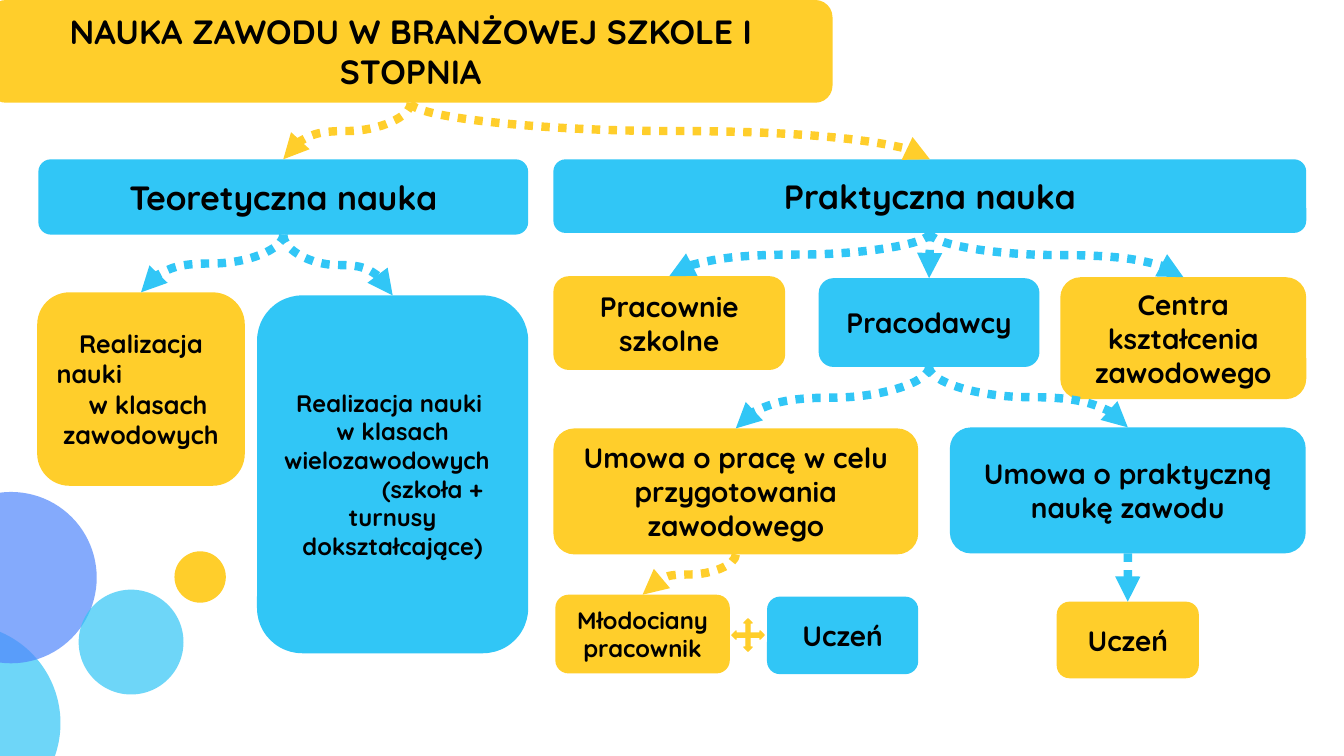
from dataclasses import dataclass

from lxml.etree import SubElement
from pptx import Presentation
from pptx.dml.color import RGBColor
from pptx.enum.dml import MSO_LINE
from pptx.enum.shapes import MSO_CONNECTOR, MSO_SHAPE
from pptx.enum.text import MSO_ANCHOR, PP_ALIGN
from pptx.oxml.ns import qn
from pptx.shapes.autoshape import Shape
from pptx.shapes.shapetree import GroupShapes, SlideShapes
from pptx.util import Pt

COLORS = {
    "yellow": "FFCE2B",
    "cyan": "31C6F6",
    "violet": "5186FB",
    "ink": "000000",
}
FRAME_FORMAT = {"word_wrap": True, "vertical_anchor": MSO_ANCHOR.MIDDLE}
FONT_FORMAT = {"name": "Quicksand", "bold": True}
LINK_FORMAT = {"width": Pt(6), "dash_style": MSO_LINE.ROUND_DOT}
TOP_SITE, BOTTOM_SITE = 0, 2


@dataclass(frozen=True)
class Line:
    text: str
    left_margin: float = 0
    right_margin: float = 0
    alignment: PP_ALIGN = PP_ALIGN.CENTER


@dataclass(frozen=True)
class Box:
    key: str
    left: float
    top: float
    width: float
    height: float
    color: str
    size: float
    lines: tuple[Line, ...]


@dataclass(frozen=True)
class Link:
    source: str
    target: str
    color: str


@dataclass(frozen=True)
class Circle:
    left: float
    top: float
    diameter: float
    color: str
    opacity: int = 100


BOXES = [
    Box("practice", 395.3, 113.8, 537.8, 52.6, "cyan", 24, (Line("Praktyczna nauka"),)),
    Box("theory", 27.4, 113.8, 349.9, 53.8, "cyan", 24, (Line("Teoretyczna nauka"),)),
    Box("title", -7.9, 0, 602.6, 73.4, "yellow", 24,
        (Line("NAUKA ZAWODU W BRANŻOWEJ SZKOLE I STOPNIA"),)),
    Box("workshops", 395.3, 197.3, 165.6, 67, "yellow", 20, (Line("Pracownie szkolne"),)),
    Box("centres", 757.4, 198, 175.7, 87.1, "yellow", 20,
        (Line("Centra kształcenia zawodowego"),)),
    Box("employers", 584.8, 198.7, 157.7, 63.4, "cyan", 20, (Line("Pracodawcy"),)),
    Box("work contract", 395.3, 306, 260.6, 90, "yellow", 20,
        (Line("Umowa o pracę w celu przygotowania zawodowego"),)),
    Box("training contract", 678.5, 305.3, 254.2, 90, "cyan", 20,
        (Line("Umowa o praktyczną naukę zawodu"),)),
    Box("trade classes", 26.6, 208.8, 148.3, 138.2, "yellow", 18, (
        Line("Realizacja"),
        Line("nauki", alignment=PP_ALIGN.LEFT),
        Line("w klasach", left_margin=10),
        Line("zawodowych"),
    )),
    Box("mixed classes", 183.6, 211, 193.7, 255.6, "cyan", 17, (
        Line("Realizacja nauki", right_margin=5),
        Line("w klasach"),
        Line("wielozawodowych", right_margin=8),
        Line("(szkoła +", left_margin=57),
        Line("turnusy"),
        Line("dokształcające)"),
    )),
    Box("young worker", 396.7, 424.8, 124.6, 56.2, "yellow", 17,
        (Line("Młodociany pracownik"),)),
    Box("trainee", 754.8, 429.8, 101.5, 54.7, "yellow", 20, (Line("Uczeń"),)),
    Box("pupil", 547.9, 426.2, 108, 55.4, "cyan", 20, (Line("Uczeń"),)),
]
LINKS = [
    Link("title", "theory", "yellow"),
    Link("title", "practice", "yellow"),
    Link("theory", "trade classes", "cyan"),
    Link("theory", "mixed classes", "cyan"),
    Link("practice", "workshops", "cyan"),
    Link("practice", "employers", "cyan"),
    Link("practice", "centres", "cyan"),
    Link("employers", "work contract", "cyan"),
    Link("employers", "training contract", "cyan"),
    Link("work contract", "young worker", "yellow"),
    Link("training contract", "trainee", "cyan"),
]
CIRCLES = [
    Circle(-98.6, 445.7, 141.8, "cyan", 70),
    Circle(-53.3, 351.4, 122.4, "violet", 70),
    Circle(124.6, 393.8, 36.7, "yellow"),
    Circle(56.2, 421.2, 74.9, "cyan", 70),
]


def color_of(name: str) -> RGBColor:
    return RGBColor.from_string(COLORS[name])


def apply_format(target: object, values: dict) -> None:
    for name, value in values.items():
        setattr(target, name, value)


def add_filled(shapes: SlideShapes | GroupShapes, kind: MSO_SHAPE, left: float,
               top: float, width: float, height: float, color: str) -> Shape:
    shape = shapes.add_shape(kind, Pt(left), Pt(top), Pt(width), Pt(height))
    shape.shadow.inherit = False
    shape.fill.solid()
    shape.fill.fore_color.rgb = color_of(color)
    shape.line.fill.background()
    return shape


def draw_box(shapes: SlideShapes, box: Box) -> Shape:
    shape = add_filled(shapes, MSO_SHAPE.ROUNDED_RECTANGLE,
                       box.left, box.top, box.width, box.height, box.color)
    frame = shape.text_frame
    apply_format(frame, FRAME_FORMAT)
    for index, line in enumerate(box.lines):
        para = frame.add_paragraph() if index else frame.paragraphs[0]
        para.alignment = line.alignment
        properties = para._p.get_or_add_pPr()
        properties.set("marL", str(Pt(line.left_margin)))
        properties.set("marR", str(Pt(line.right_margin)))
        span = para.add_run()
        span.text = line.text
        apply_format(span.font, FONT_FORMAT | {"size": Pt(box.size)})
        span.font.color.rgb = color_of("ink")
    return shape


def draw_link(shapes: SlideShapes, link: Link, drawn: dict[str, Shape]) -> None:
    source, target = drawn[link.source], drawn[link.target]
    start_x = source.left + source.width // 2
    end_x = target.left + target.width // 2
    start_y, end_y = source.top + source.height, target.top
    drop, reach = end_y - start_y, abs(end_x - start_x)
    rightward = end_x > start_x

    connector = shapes.add_connector(MSO_CONNECTOR.CURVE, start_x, start_y, end_x, end_y)
    connector.begin_connect(source, BOTTOM_SITE)
    connector.end_connect(target, TOP_SITE)
    apply_format(connector, {
        "left": (start_x + end_x - drop) // 2,
        "top": (start_y + end_y - reach) // 2,
        "width": drop,
        "height": reach,
    })
    properties = connector._element.spPr
    transform = properties.find(qn("a:xfrm"))
    transform.set("rot", str((270 if rightward else 90) * 60000))
    transform.set("flipH", str(int(rightward)))
    transform.set("flipV", "0")

    connector.line.color.rgb = color_of(link.color)
    apply_format(connector.line, LINK_FORMAT)
    SubElement(properties.find(qn("a:ln")), qn("a:tailEnd"), type="triangle")
    SubElement(properties, qn("a:effectLst"))


def draw_circle(shapes: GroupShapes, circle: Circle) -> None:
    shape = add_filled(shapes, MSO_SHAPE.OVAL, circle.left, circle.top,
                       circle.diameter, circle.diameter, circle.color)
    if circle.opacity < 100:
        tone = shape._element.spPr.find(qn("a:solidFill"))[0]
        SubElement(tone, qn("a:alpha"), val=str(circle.opacity * 1000))


def draw_cross(shapes: GroupShapes) -> None:
    for rotation in (0, 90):
        arrow = add_filled(shapes, MSO_SHAPE.UP_DOWN_ARROW, 531.4, 442.1, 5.8, 23, "yellow")
        arrow.rotation = rotation
        arrow.line.color.rgb = color_of("yellow")
        arrow.line.width = Pt(1)


def main() -> None:
    deck = Presentation()
    apply_format(deck, {"slide_width": Pt(960), "slide_height": Pt(540)})
    page = deck.slides.add_slide(deck.slide_layouts[6])
    drawn = {box.key: draw_box(page.shapes, box) for box in BOXES}
    for link in LINKS:
        draw_link(page.shapes, link, drawn)
    draw_cross(page.shapes.add_group_shape().shapes)
    bubbles = page.shapes.add_group_shape().shapes
    for circle in CIRCLES:
        draw_circle(bubbles, circle)
    deck.save("out.pptx")


if __name__ == "__main__":
    main()
